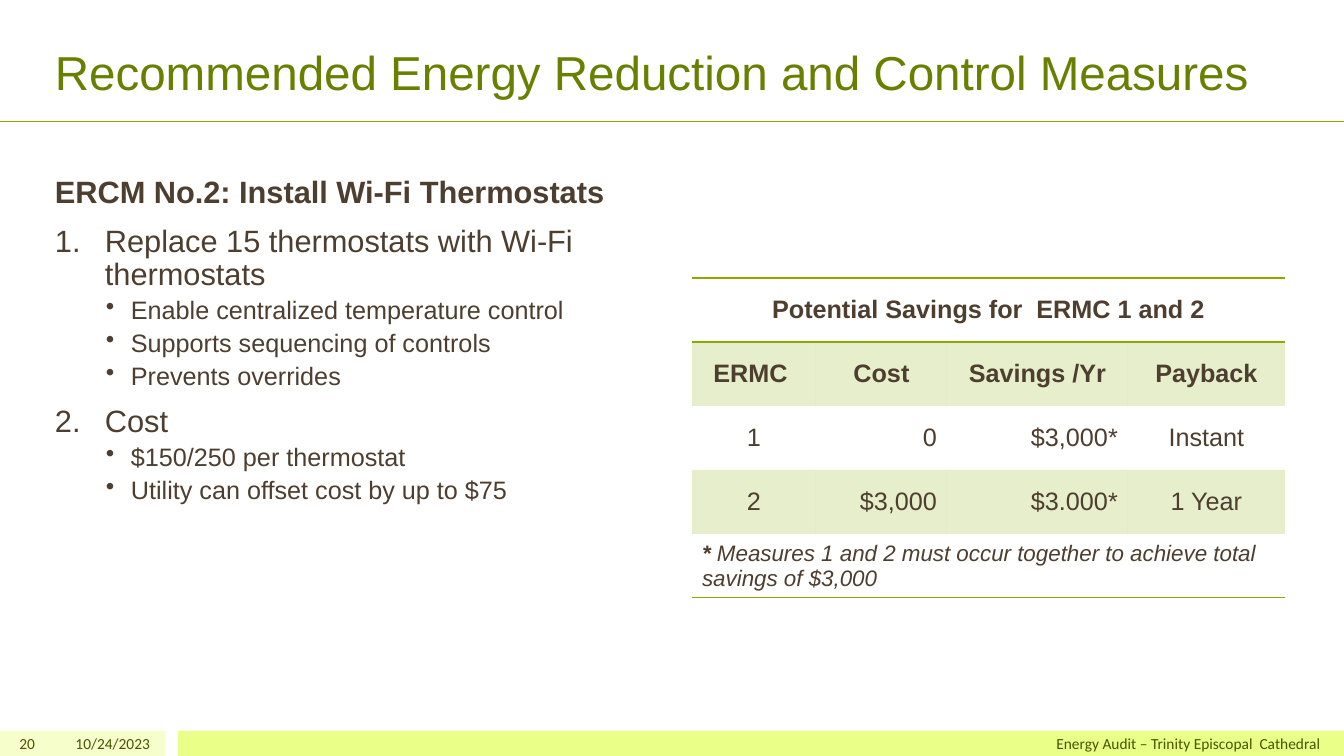
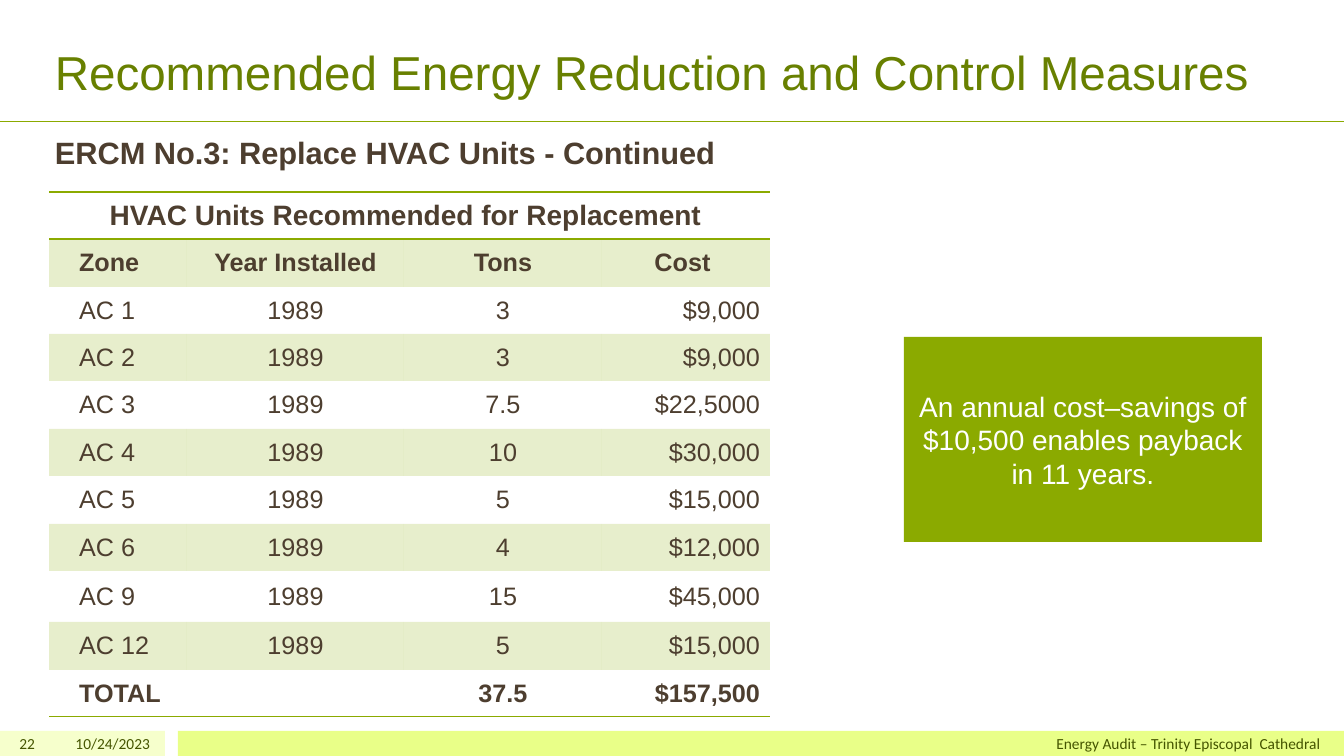
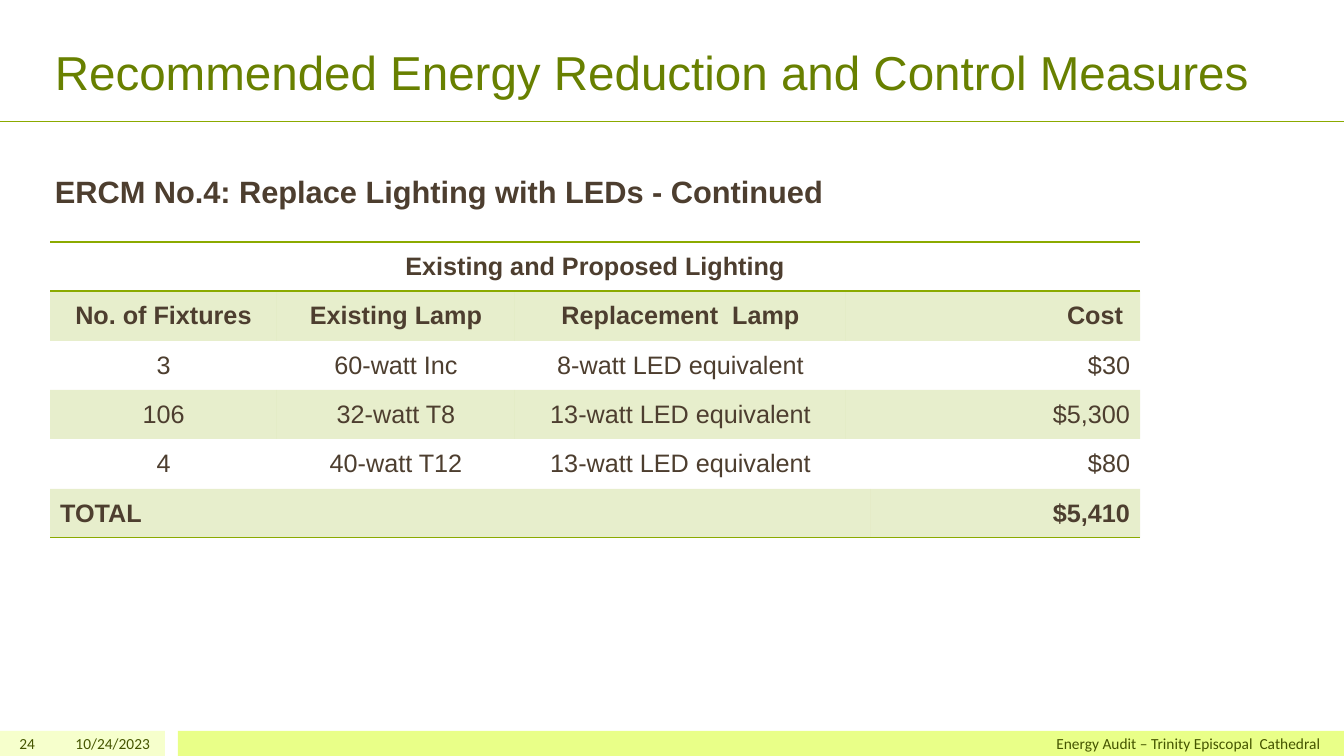
from dataclasses import dataclass
from typing import NamedTuple

from lxml import etree
from pptx import Presentation
from pptx.dml.color import RGBColor
from pptx.enum.shapes import MSO_CONNECTOR, MSO_SHAPE
from pptx.enum.text import MSO_ANCHOR as Anchor, PP_ALIGN as Align
from pptx.oxml.ns import qn
from pptx.util import Emu, Pt

SLIDE_WIDTH, SLIDE_HEIGHT = 1344, 756
EMU_PER_PX = 12192000 / SLIDE_WIDTH
NO_TABLE_STYLE = "{2D5ABB26-0587-4C30-8999-92F81FD0307C}"


@dataclass(frozen=True)
class Theme:
    green: str = "8BAA00"
    title_green: str = "688000"
    footer_green: str = "455500"
    pale_band: str = "F6FFCC"
    bright_band: str = "E9FF88"
    brown: str = "4D3E2F"
    white: str = "FFFFFF"
    font: str = "Arial"
    footer_font: str = "Calibri"
    title_size: int = 34
    heading_size: int = 22
    large_size: int = 20
    text_size: int = 18
    note_size: int = 16
    footer_size: int = 11
    shade_percent: int = 20


THEME = Theme()


class Box(NamedTuple):
    left: int
    top: int
    width: int
    height: int


class TextStyle(NamedTuple):
    size: int
    color: str = THEME.brown
    font: str = THEME.font
    bold: bool = False
    italic: bool = False
    align: Align = Align.LEFT


class ListLevel(NamedTuple):
    level: int
    style: TextStyle
    indent: int
    hanging: int
    space_before: int
    bullet_tag: str = ""
    bullet: tuple = ()


class CellStyle(NamedTuple):
    align: Align = Align.CENTER
    indent: int = 0
    span: int = 1


class Cell(NamedTuple):
    text: str
    style: CellStyle = CellStyle()
    bold: bool = False
    size: int = THEME.text_size
    italic: bool = False
    lead: str = ""  # bold run ahead of the text


@dataclass(frozen=True)
class TableSpec:
    left: int
    top: int
    widths: tuple[int, ...]
    heights: tuple[int, ...]
    rows: list[list[Cell]]


TITLE = TextStyle(THEME.title_size, THEME.title_green)
FOOTER = TextStyle(THEME.footer_size, THEME.footer_green, THEME.footer_font, align=Align.RIGHT)
CALLOUT = TextStyle(THEME.large_size, THEME.white, align=Align.CENTER)

HEADING = ListLevel(0, TextStyle(THEME.heading_size, bold=True), 0, 0, 11)
NUMBER = ListLevel(0, TextStyle(THEME.heading_size), 50, 50, 11,
                   "a:buAutoNum", (("type", "arabicPeriod"),))
BULLET = ListLevel(1, TextStyle(THEME.text_size), 76, 25, 4, "a:buChar", (("char", "•"),))

CENTER = CellStyle()
RIGHT = CellStyle(Align.RIGHT)
INDENTED = CellStyle(Align.LEFT, indent=20)


def px(length: float) -> Emu:
    return Emu(round(length * EMU_PER_PX))


def place(box: Box) -> tuple[Emu, ...]:
    return tuple(px(length) for length in box)


def rgb(color: str) -> RGBColor:
    return RGBColor.from_string(color)


# Text
def style_paragraph(paragraph, style: TextStyle) -> None:
    paragraph.alignment = style.align
    font = paragraph.font
    font.name, font.size = style.font, Pt(style.size)
    font.bold, font.italic = style.bold, style.italic
    font.color.rgb = rgb(style.color)


def add_text(slide, box: Box, text: str, style: TextStyle, anchor: Anchor = Anchor.MIDDLE) -> None:
    frame = slide.shapes.add_textbox(*place(box)).text_frame
    frame.word_wrap, frame.vertical_anchor = True, anchor
    frame.text = text
    style_paragraph(frame.paragraphs[0], style)


def add_body(slide, box: Box, items: list[tuple[str, ListLevel]]) -> None:
    frame = slide.shapes.add_textbox(*place(box)).text_frame
    frame.word_wrap = True
    for index, (text, kind) in enumerate(items):
        paragraph = frame.add_paragraph() if index else frame.paragraphs[0]
        paragraph.text, paragraph.level = text, kind.level
        paragraph.line_spacing = 0.9
        paragraph.space_before = Pt(kind.space_before if index else 0)
        if kind.bullet_tag:
            properties = paragraph._p.get_or_add_pPr()
            properties.set("marL", str(px(kind.indent)))
            properties.set("indent", str(-px(kind.hanging)))
            etree.SubElement(properties, qn(kind.bullet_tag), dict(kind.bullet))
        style_paragraph(paragraph, kind.style)


# Shapes
def add_rectangle(slide, box: Box, color: str):
    shape = slide.shapes.add_shape(MSO_SHAPE.RECTANGLE, *place(box))
    shape.shadow.inherit = False
    shape.fill.solid()
    shape.fill.fore_color.rgb = rgb(color)
    shape.line.fill.background()
    return shape


def add_callout(slide, box: Box, text: str) -> None:
    frame = add_rectangle(slide, box, THEME.green).text_frame
    frame.word_wrap, frame.vertical_anchor = True, Anchor.MIDDLE
    frame.text = text
    style_paragraph(frame.paragraphs[0], CALLOUT)


def add_rule(slide, top: int) -> None:
    rule = slide.shapes.add_connector(
        MSO_CONNECTOR.STRAIGHT, 0, px(top), px(SLIDE_WIDTH), px(top))
    rule.line.color.rgb = rgb(THEME.green)
    rule.line.width = Pt(0.5)
    etree.SubElement(rule._element.spPr, qn("a:effectLst"))


# Tables
def shade(cell) -> None:
    cell.fill.solid()
    cell.fill.fore_color.rgb = rgb(THEME.green)
    color = next(cell._tc.tcPr.iter(qn("a:srgbClr")))
    etree.SubElement(color, qn("a:alpha"), val=str(THEME.shade_percent * 1000))


def add_border(cell, tag: str) -> None:
    line = etree.Element(qn(tag), w=str(Pt(1)))
    fill = etree.SubElement(line, qn("a:solidFill"))
    etree.SubElement(fill, qn("a:srgbClr"), val=THEME.green)
    cell._tc.get_or_add_tcPr().insert(0, line)


def fill_cell(cell, content: Cell) -> None:
    cell.vertical_anchor = Anchor.MIDDLE
    paragraph = cell.text_frame.paragraphs[0]
    if content.lead:
        lead = paragraph.add_run()
        lead.text, lead.font.bold = content.lead, True
    paragraph.add_run().text = content.text
    if content.style.indent:
        paragraph._p.get_or_add_pPr().set("marL", str(px(content.style.indent)))
    style_paragraph(paragraph, TextStyle(content.size, bold=content.bold, italic=content.italic,
                                         align=content.style.align))


def add_table(slide, spec: TableSpec) -> None:
    box = Box(spec.left, spec.top, sum(spec.widths), sum(spec.heights))
    table = slide.shapes.add_table(len(spec.heights), len(spec.widths), *place(box)).table
    table.first_row = table.horz_banding = False
    table._tbl.tblPr.find(qn("a:tableStyleId")).text = NO_TABLE_STYLE
    for column, width in zip(table.columns, spec.widths):
        column.width = px(width)
    last = len(spec.rows) - 1
    for index, (height, contents) in enumerate(zip(spec.heights, spec.rows)):
        table.rows[index].height = px(height)
        for cell in table.rows[index].cells:
            if index % 2:
                shade(cell)
            else:
                cell.fill.background()
            if index in (0, last):
                add_border(cell, "a:lnB")
            if index == 0:
                add_border(cell, "a:lnT")
        position = 0
        for content in contents:
            cell = table.cell(index, position)
            position += content.style.span
            if content.style.span > 1:
                cell.merge(table.cell(index, position - 1))
            fill_cell(cell, content)


def make_row(texts: tuple[str, ...], styles: tuple[CellStyle, ...], bold: bool = False) -> list[Cell]:
    return [Cell(text, style, bold) for text, style in zip(texts, styles)]


# Parts shared by all slides
def add_base_slide(presentation, number: int):
    slide = presentation.slides.add_slide(presentation.slide_layouts[6])
    add_rectangle(slide, Box(0, 731, 165, 25), THEME.pale_band)
    add_rectangle(slide, Box(178, 731, 1166, 25), THEME.bright_band)
    add_rule(slide, 121)
    add_text(slide, Box(45, 30, 1262, 75), "Recommended Energy Reduction and Control Measures",
             TITLE, Anchor.BOTTOM)
    add_text(slide, Box(0, 731, 45, 25), str(number), FOOTER)
    add_text(slide, Box(50, 731, 110, 25), "10/24/2023", FOOTER)
    add_text(slide, Box(326, 731, 1008, 25), "Energy Audit – Trinity Episcopal  Cathedral ", FOOTER)
    return slide


# Slides
def add_thermostat_slide(presentation) -> None:
    slide = add_base_slide(presentation, 20)
    add_body(slide, Box(45, 172, 627, 509), [
        ("ERCM No.2: Install Wi-Fi Thermostats", HEADING),
        ("Replace 15 thermostats with Wi-Fi thermostats", NUMBER),
        ("Enable centralized temperature control", BULLET),
        ("Supports sequencing of controls", BULLET),
        ("Prevents overrides", BULLET),
        ("Cost", NUMBER),
        ("$150/250 per thermostat", BULLET),
        ("Utility can offset cost by up to $75", BULLET),
    ])
    styles = (CENTER, RIGHT, RIGHT, CENTER)
    add_table(slide, TableSpec(692, 278, (124, 131, 181, 157), (64,) * 5, [
        [Cell("Potential Savings for  ERMC 1 and 2", CellStyle(span=4), bold=True)],
        make_row(("ERMC ", "Cost", "Savings /Yr", "Payback"), (CENTER,) * 4, bold=True),
        make_row(("1", "0", "$3,000*", "Instant"), styles),
        make_row(("2", "$3,000", "$3.000*", "1 Year"), styles),
        [Cell("Measures 1 and 2 must occur together to achieve total savings of $3,000",
              CellStyle(Align.LEFT, span=4), size=THEME.note_size, italic=True, lead="* ")],
    ]))


def add_hvac_slide(presentation) -> None:
    slide = add_base_slide(presentation, 22)
    add_body(slide, Box(45, 133, 1033, 509), [("ERCM No.3: Replace HVAC Units - Continued", HEADING)])
    units = (("AC 1", "3", "$9,000"), ("AC 2", "3", "$9,000"), ("AC 3", "7.5", "$22,5000"),
             ("AC 4", "10", "$30,000"), ("AC 5", "5", "$15,000"), ("AC 6", "4", "$12,000"),
             ("AC 9", "15", "$45,000"), ("AC 12", "5", "$15,000"))
    heights = (47, 48, 47, 47, 48, 47, 48, 47, 51, 48, 47)
    add_table(slide, TableSpec(49, 192, (138, 217, 198, 168), heights, [
        [Cell("HVAC Units Recommended for Replacement ", CellStyle(span=4), bold=True,
              size=THEME.large_size)],
        make_row(("Zone", "Year Installed", "Tons", "Cost "),
                 (INDENTED, CENTER, CENTER, CENTER), bold=True),
        *(make_row((zone, "1989", tons, cost), (INDENTED, CENTER, CENTER, RIGHT))
          for zone, tons, cost in units),
        make_row(("TOTAL", "37.5", "$157,500"),
                 (INDENTED._replace(span=2), CENTER, RIGHT), bold=True),
    ]))
    add_callout(slide, Box(904, 337, 358, 205),
                "An annual cost–savings of $10,500 enables payback in 11 years.")


def add_lighting_slide(presentation) -> None:
    slide = add_base_slide(presentation, 24)
    add_body(slide, Box(45, 172, 1033, 509),
             [("ERCM No.4: Replace Lighting with LEDs - Continued", HEADING)])
    styles = (CENTER, CENTER, CENTER, RIGHT._replace(span=2))
    lamps = (("3", "60-watt Inc", "8-watt LED equivalent", "$30"),
             ("106", "32-watt T8", "13-watt LED equivalent", "$5,300"),
             ("4", "40-watt T12", "13-watt LED equivalent", "$80"))
    add_table(slide, TableSpec(50, 242, (227, 238, 331, 16, 270), (49, 50, 49, 49, 50, 49), [
        [Cell("Existing and Proposed Lighting", CellStyle(span=5), bold=True)],
        make_row(("No. of Fixtures", "Existing Lamp", "Replacement  Lamp", "Cost "),
                 styles, bold=True),
        *(make_row(lamp, styles) for lamp in lamps),
        make_row(("TOTAL", "$5,410"), (CellStyle(Align.LEFT, span=4), RIGHT), bold=True),
    ]))


def main() -> None:
    presentation = Presentation()
    presentation.slide_width, presentation.slide_height = px(SLIDE_WIDTH), px(SLIDE_HEIGHT)
    add_thermostat_slide(presentation)
    add_hvac_slide(presentation)
    add_lighting_slide(presentation)
    presentation.save("out.pptx")


if __name__ == "__main__":
    main()
